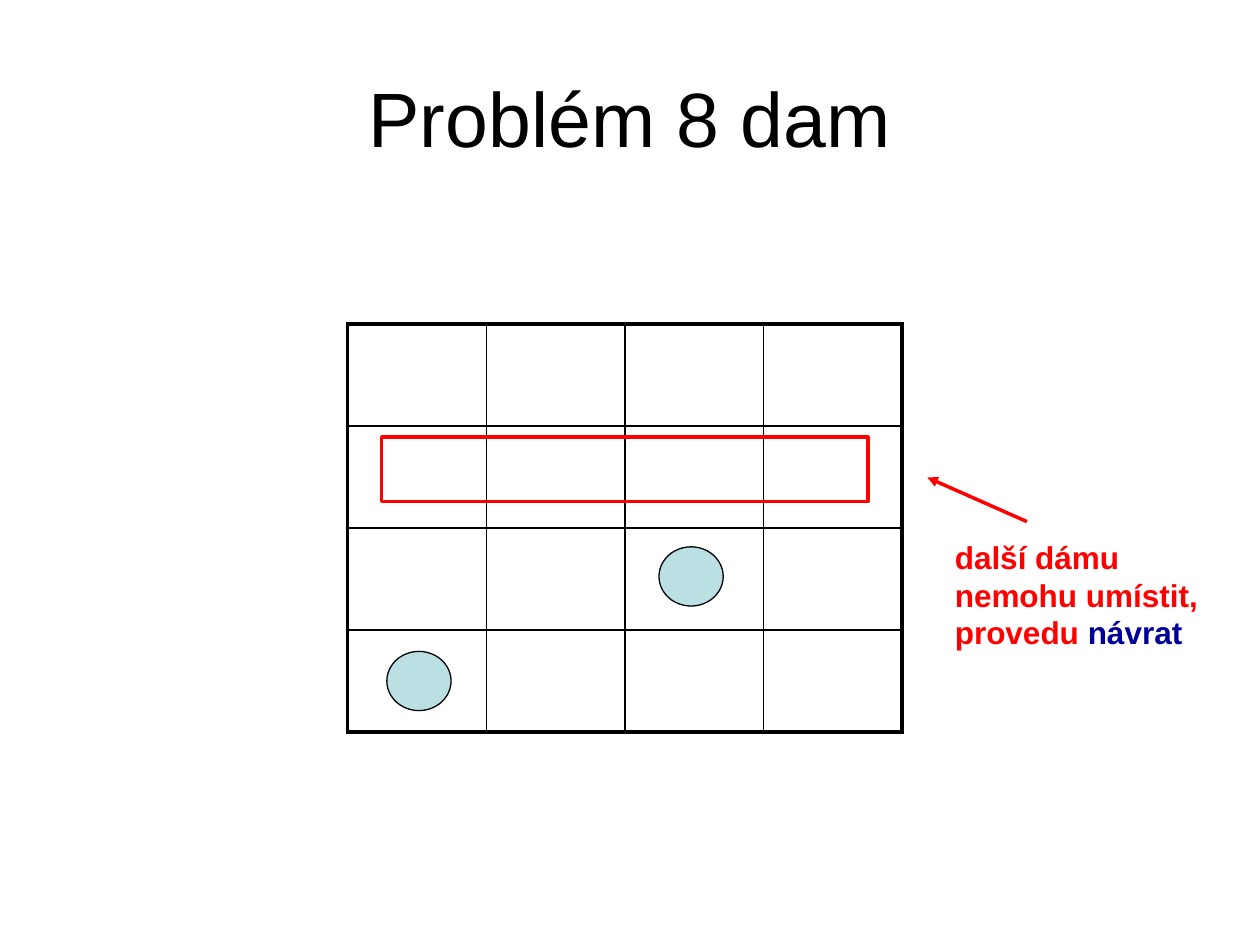
from dataclasses import dataclass

from lxml.etree import SubElement
from pptx import Presentation
from pptx.dml.color import RGBColor
from pptx.enum.shapes import MSO_CONNECTOR, MSO_SHAPE
from pptx.enum.text import MSO_ANCHOR, MSO_AUTO_SIZE, PP_ALIGN
from pptx.oxml.ns import qn
from pptx.util import Inches, Pt


@dataclass(frozen=True)
class Theme:
    font: str = "Arial"
    title_size: int = 44
    note_size: int = 18
    black: str = "000000"
    red: str = "FF0000"
    navy: str = "000099"
    queen: str = "BBE0E3"
    thin: float = 1
    thick: float = 2.25
    outline: float = 0.75
    accent: float = 2


THEME = Theme()
BOARD_SIZE = 4
BOARD_LEFT, BOARD_TOP = 2.76, 2.57
CELL_W, CELL_H = 1.1, 0.81


def rgb(value):
    return RGBColor.from_string(value)


def add_run(p, text, size, color, bold=False):
    r = p.add_run()
    r.text = text
    r.font.name = THEME.font
    r.font.size = Pt(size)
    r.font.bold = bold
    r.font.color.rgb = rgb(color)


def set_title(s, text):
    sp = s.shapes.title
    sp.left, sp.top = Inches(0.5), Inches(0.3)
    sp.width, sp.height = Inches(9), Inches(1.25)
    tf = sp.text_frame
    tf.vertical_anchor = MSO_ANCHOR.MIDDLE
    p = tf.paragraphs[0]
    p.alignment = PP_ALIGN.CENTER
    add_run(p, text, THEME.title_size, THEME.black)


def set_border(cell, side, width):
    ln = SubElement(cell._tc.get_or_add_tcPr(), qn(f"a:ln{side}"), w=str(Pt(width)))
    fill = SubElement(ln, qn("a:solidFill"))
    SubElement(fill, qn("a:srgbClr"), val=THEME.black)


def add_board(s):
    """Add an empty square grid with a thick outer frame."""
    table = s.shapes.add_table(
        BOARD_SIZE, BOARD_SIZE, Inches(BOARD_LEFT), Inches(BOARD_TOP),
        Inches(BOARD_SIZE * CELL_W), Inches(BOARD_SIZE * CELL_H)).table
    table.first_row = table.horz_banding = False
    last = BOARD_SIZE - 1
    for row in range(BOARD_SIZE):
        for col in range(BOARD_SIZE):
            cell = table.cell(row, col)
            on_frame = {"L": col == 0, "R": col == last, "T": row == 0, "B": row == last}
            for side, outer in on_frame.items():
                set_border(cell, side, THEME.thick if outer else THEME.thin)
            cell.fill.background()


def add_outlined(s, kind, left, top, width, height, line, line_width, fill=None):
    sp = s.shapes.add_shape(kind, Inches(left), Inches(top), Inches(width), Inches(height))
    sp.shadow.inherit = False
    if fill:
        sp.fill.solid()
        sp.fill.fore_color.rgb = rgb(fill)
    else:
        sp.fill.background()
    sp.line.color.rgb = rgb(line)
    sp.line.width = Pt(line_width)


def add_queen(s, left, top):
    add_outlined(s, MSO_SHAPE.OVAL, left, top, 0.51, 0.47,
                 THEME.black, THEME.outline, THEME.queen)


def add_note(s, left, top, width, height, runs):
    sp = s.shapes.add_textbox(Inches(left), Inches(top), Inches(width), Inches(height))
    tf = sp.text_frame
    tf.word_wrap = True
    tf.auto_size = MSO_AUTO_SIZE.SHAPE_TO_FIT_TEXT
    for text, color in runs:
        add_run(tf.paragraphs[0], text, THEME.note_size, color, bold=True)


def add_arrow(s, x1, y1, x2, y2):
    line = s.shapes.add_connector(
        MSO_CONNECTOR.STRAIGHT, Inches(x1), Inches(y1), Inches(x2), Inches(y2))
    line.line.color.rgb = rgb(THEME.red)
    line.line.width = Pt(THEME.accent)
    SubElement(line.line._get_or_add_ln(), qn("a:tailEnd"), type="triangle")
    SubElement(line._element.spPr, qn("a:effectLst"))


def main():
    prs = Presentation()
    prs.slide_width, prs.slide_height = Inches(10), Inches(7.5)
    s = prs.slides.add_slide(prs.slide_layouts[5])
    set_title(s, "Problém 8 dam")
    add_board(s)
    add_queen(s, 3.07, 5.17)
    add_queen(s, 5.23, 4.34)
    add_outlined(s, MSO_SHAPE.RECTANGLE, 3.03, 3.47, 3.86, 0.51, THEME.red, THEME.accent)
    add_note(s, 7.48, 4.22, 2.13, 1.3, [
        ("další dámu nemohu umístit, provedu ", THEME.red),
        ("návrat", THEME.navy),
    ])
    add_arrow(s, 8.15, 4.14, 7.36, 3.79)
    prs.save("out.pptx")


if __name__ == "__main__":
    main()
